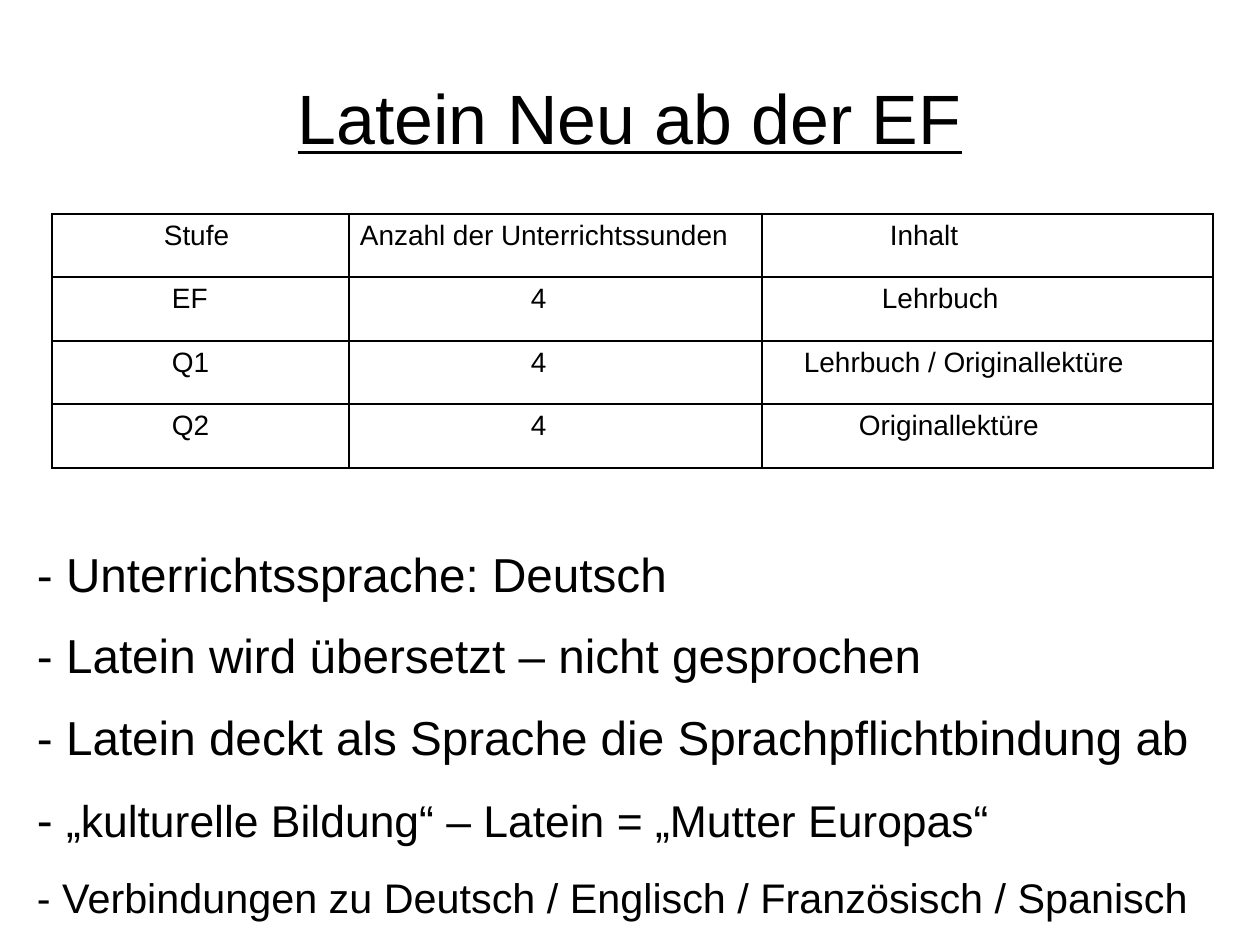
from lxml import etree
from pptx import Presentation
from pptx.dml.color import RGBColor
from pptx.enum.text import MSO_ANCHOR, PP_ALIGN
from pptx.oxml.ns import qn
from pptx.util import Emu, Pt

CENTER = PP_ALIGN.CENTER
MIDDLE = MSO_ANCHOR.MIDDLE
EMU_PER_PX = 914400 / 126
FONT = "Arial"
BLACK = "000000"

COLUMNS = [297, 413, 451]
ROWS = [63, 64, 63, 64]
# Each cell: wording and indent in px
LESSONS = [
    [("Stufe", 101), ("Anzahl der Unterrichtssunden", 0), ("Inhalt", 117)],
    [("EF", 109), ("4", 171), ("Lehrbuch", 109)],
    [("Q1", 109), ("4", 171), ("Lehrbuch / Originallektüre", 31)],
    [("Q2", 109), ("4", 171), ("Originallektüre", 86)],
]
# Each point: runs of wording and size
POINTS = [
    [("- Unterrichtssprache: Deutsch", 27.2)],
    [("- Latein wird übersetzt – nicht gesprochen", 27.2)],
    [("- Latein deckt als Sprache die Sprachpflichtbindung ab", 27.2)],
    [("- ", 27.2), ("„kulturelle Bildung“ – Latein = „Mutter Europas“", 25.4)],
    [("- Verbindungen zu Deutsch / Englisch / Französisch / Spanisch", 23.6)],
]


def px(length):
    return Emu(round(length * EMU_PER_PX))


def color(hex_value):
    return RGBColor.from_string(hex_value)


def style(font, size=None):
    font.name = FONT
    font.color.rgb = color(BLACK)
    if size:
        font.size = Pt(size)


def add_text_frame(slide, box):
    frame = slide.shapes.add_textbox(*map(px, box)).text_frame
    frame.word_wrap = True
    frame.margin_left = frame.margin_right = 0
    frame.margin_top = frame.margin_bottom = 0
    return frame


def add_title(slide, box):
    frame = add_text_frame(slide, box)
    frame.vertical_anchor = MIDDLE
    heading = frame.paragraphs[0]
    heading.text = "Latein Neu ab der EF"
    heading.alignment = CENTER
    style(heading.font, 39.9)
    heading.font.underline = True


def add_borders(cell):
    properties = cell._tc.get_or_add_tcPr()
    for side in ("lnL", "lnR", "lnT", "lnB"):
        line = etree.SubElement(properties, qn(f"a:{side}"), w=str(Pt(1)))
        fill = etree.SubElement(line, qn("a:solidFill"))
        etree.SubElement(fill, qn("a:srgbClr"), val=BLACK)


def add_lesson_table(slide, left, top):
    box = map(px, (left, top, sum(COLUMNS), sum(ROWS)))
    table = slide.shapes.add_table(len(ROWS), len(COLUMNS), *box).table
    table.first_row = table.horz_banding = False
    for column, width in zip(table.columns, COLUMNS):
        column.width = px(width)
    for row, height, entries in zip(table.rows, ROWS, LESSONS):
        row.height = px(height)
        for cell, (wording, indent) in zip(row.cells, entries):
            add_borders(cell)
            cell.fill.background()
            cell.margin_left, cell.margin_right = px(11 + indent), px(11)
            cell.margin_top = cell.margin_bottom = px(6)
            entry = cell.text_frame.paragraphs[0]
            entry.text = wording
            style(entry.font, 16)


def add_points(slide, box):
    frame = add_text_frame(slide, box)
    for index, runs in enumerate(POINTS):
        point = frame.add_paragraph() if index else frame.paragraphs[0]
        point.line_spacing = 0.9
        point.space_before = Pt(4.5 if index else 0)
        point.space_after = Pt(12.8)
        style(point.font)
        for wording, size in runs:
            run = point.add_run()
            run.text = wording
            run.font.size = Pt(size)


def main():
    deck = Presentation()
    deck.slide_width, deck.slide_height = px(1260), px(945)
    slide = deck.slides.add_slide(deck.slide_layouts[6])
    add_title(slide, (63, 38, 1134, 158))
    add_lesson_table(slide, 52, 214)
    add_points(slide, (37, 551, 1160, 366))
    deck.save("out.pptx")


if __name__ == "__main__":
    main()
